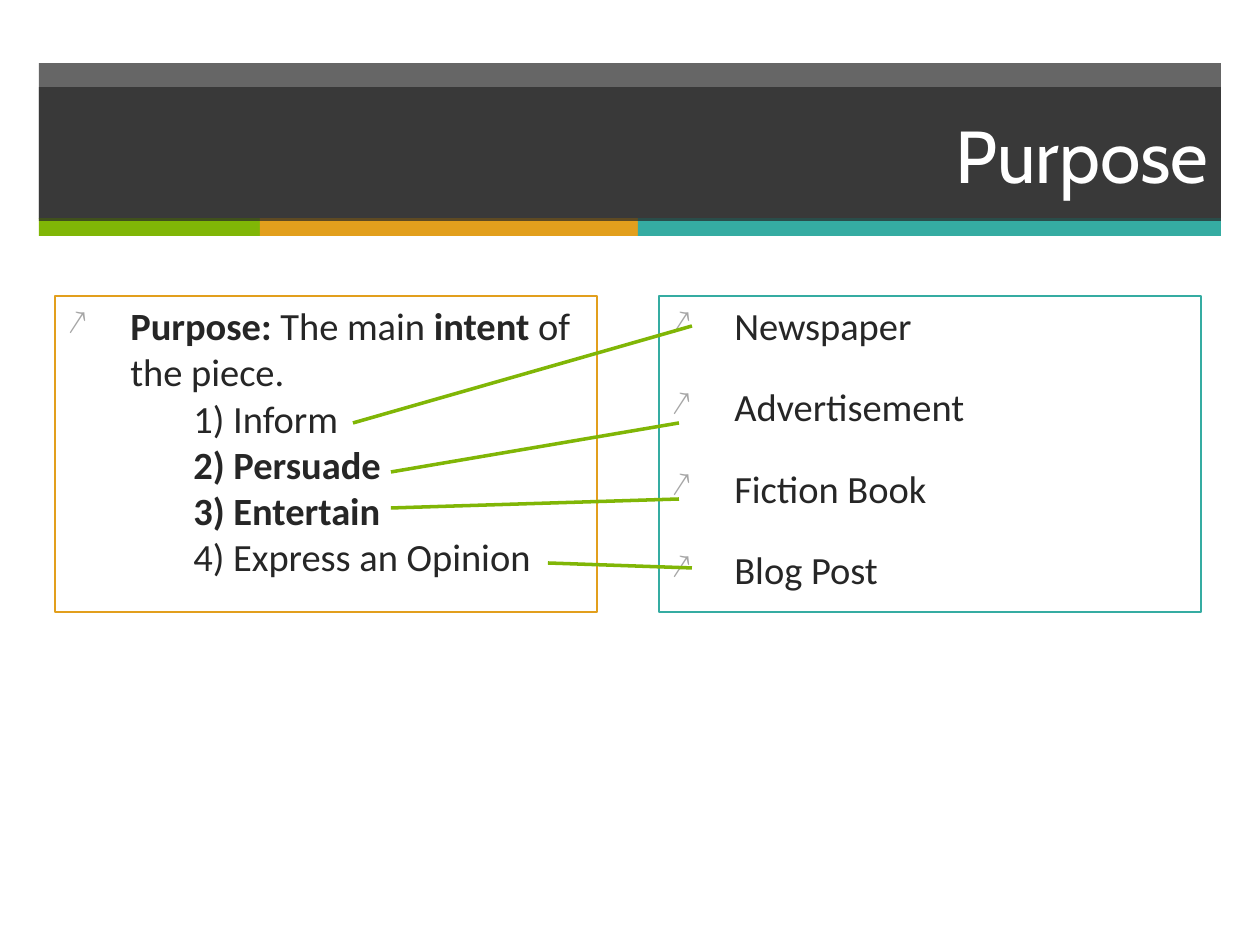
from lxml.etree import SubElement
from pptx import Presentation
from pptx.dml.color import RGBColor
from pptx.enum.shapes import MSO_CONNECTOR as CONN, MSO_SHAPE as SHAPE
from pptx.enum.text import MSO_ANCHOR as ANCHOR, PP_ALIGN as ALIGN
from pptx.oxml.ns import qn
from pptx.util import Emu, Pt

PX = 914400 // 126
COLORS = dict(dark="262626", white="FFFFFF", bullet="A6A6A6",
              green="80B606", orange="E29F1D", teal="35ACA2")

TITLE = "Purpose"
BAND = (39, 63, 1182, 156)
TITLE_BOX = (39, 87, 1182, 134)
STRIPE_TOP, STRIPE_HEIGHT = 218, 18
STRIPES = [("green", 221), ("orange", 378), ("teal", 583)]

# Each panel holds paragraphs, each paragraph lines, each line (text, bold) runs.
PURPOSES = [[
    [("Purpose: ", True), ("The main ", False), ("intent", True), (" of the piece.", False)],
    [("\t1) Inform", False)],
    [("\t2) Persuade", True)],
    [("\t3) Entertain", True)],
    [("\t4) Express an Opinion", False)],
]]
EXAMPLES = [[[(name, False)]] for name in
            ("Newspaper", "Advertisement", "Fiction Book", "Blog Post")]
PANELS = [(55, "orange", PURPOSES), (659, "teal", EXAMPLES)]
PANEL_TOP, PANEL_WIDTH, PANEL_HEIGHT = 296, 542, 316

MATCHES = [
    ((391, 472), (679, 423)),
    ((391, 508), (679, 499)),
    ((548, 563), (692, 568)),
    ((353, 423), (692, 326)),
]


def px(*values):
    return [Emu(v * PX) for v in values]


def rgb(name):
    return RGBColor.from_string(COLORS[name])


def add_rect(slide, box, fill=None, alpha=None, line=None):
    sp = slide.shapes.add_shape(SHAPE.RECTANGLE, *px(*box))
    sp.shadow.inherit = False
    if fill:
        sp.fill.solid()
        sp.fill.fore_color.rgb = rgb(fill)
    else:
        sp.fill.background()
    if alpha:
        color = sp.fill._xPr.find(qn("a:solidFill"))[0]
        SubElement(color, qn("a:alpha"), val=str(alpha * 1000))
    if line:
        sp.line.color.rgb = rgb(line)
        sp.line.width = Pt(0.75)
    else:
        sp.line.fill.background()
    return sp


def add_run(p, text, color, **formats):
    r = p.add_run()
    r.text = text
    r.font.color.rgb = rgb(color)
    for name, value in formats.items():
        setattr(r.font, name, value)


def add_bullet(p):
    pPr = p._p.get_or_add_pPr()
    pPr.set("marL", "457200")
    pPr.set("indent", "-457200")
    color = SubElement(pPr, qn("a:buClr"))
    SubElement(color, qn("a:srgbClr"), val=COLORS["bullet"])
    SubElement(pPr, qn("a:buSzPct"), val="90000")
    SubElement(pPr, qn("a:buChar"), char="↗")


def add_panel(slide, left, color, paragraphs):
    box = (left, PANEL_TOP, PANEL_WIDTH, PANEL_HEIGHT)
    tf = add_rect(slide, box, line=color).text_frame
    tf.vertical_anchor = ANCHOR.TOP
    for i, lines in enumerate(paragraphs):
        p = tf.add_paragraph() if i else tf.paragraphs[0]
        p.alignment = ALIGN.LEFT
        p.space_before = Pt(20)
        add_bullet(p)
        for j, line in enumerate(lines):
            if j:
                p.add_line_break()
            for text, bold in line:
                add_run(p, text, "dark", name="Calibri", size=Pt(22), bold=bold)


def add_match(slide, start, end):
    line = slide.shapes.add_connector(CONN.STRAIGHT, *px(*start, *end))
    line.line.color.rgb = rgb("green")
    line.line.width = Pt(2)
    SubElement(line._element.spPr, qn("a:effectLst"))


def main():
    prs = Presentation()
    prs.slide_width, prs.slide_height = px(1260, 945)
    slide = prs.slides.add_slide(prs.slide_layouts[6])

    add_rect(slide, BAND, "dark", alpha=70)
    left = BAND[0]
    for color, width in STRIPES:
        add_rect(slide, (left, STRIPE_TOP, width, STRIPE_HEIGHT), color)
        left += width

    tf = add_rect(slide, TITLE_BOX, "dark", alpha=70).text_frame
    tf.vertical_anchor = ANCHOR.MIDDLE
    p = tf.paragraphs[0]
    p.alignment = ALIGN.RIGHT
    add_run(p, TITLE, "white", name="Cabin", size=Pt(42))

    for panel in PANELS:
        add_panel(slide, *panel)
    for match in MATCHES:
        add_match(slide, *match)
    prs.save("out.pptx")


if __name__ == "__main__":
    main()
